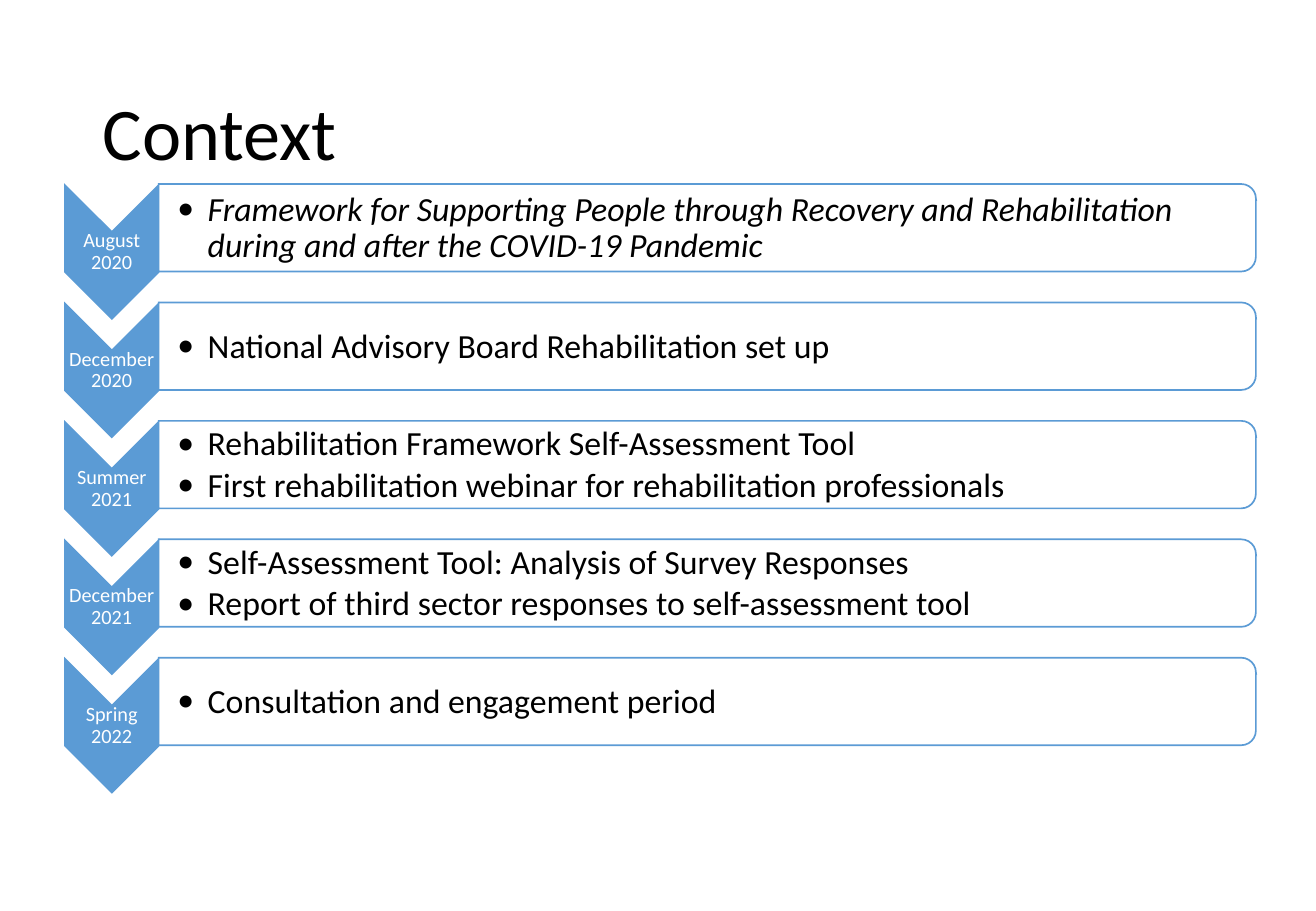
"""Builds the Context slide: a vertical chevron timeline with one card per date."""
from lxml import etree
from pptx import Presentation
from pptx.dml.color import RGBColor
from pptx.enum.shapes import MSO_SHAPE
from pptx.enum.text import MSO_ANCHOR, PP_ALIGN
from pptx.oxml.ns import qn
from pptx.util import Pt

TITLE = "Context"
MILESTONES = [
    ("August 2020", True, ["Framework for Supporting People through Recovery and "
                           "Rehabilitation during and after the COVID-19 Pandemic"]),
    ("December 2020", False, ["National Advisory Board Rehabilitation set up"]),
    ("Summer 2021", False, ["Rehabilitation Framework Self-Assessment Tool",
                            "First rehabilitation webinar for rehabilitation professionals"]),
    ("December 2021", False, ["Self-Assessment Tool: Analysis of Survey Responses",
                              "Report of third sector responses to self-assessment tool"]),
    ("Spring 2022", False, ["Consultation and engagement period"]),
]

FONT = "Calibri"
BLUE = RGBColor(0x5B, 0x9B, 0xD5)
WHITE = RGBColor(0xFF, 0xFF, 0xFF)
BLACK = RGBColor(0x00, 0x00, 0x00)
CHEVRON = MSO_SHAPE.CHEVRON
CARD = MSO_SHAPE.ROUND_2_SAME_RECTANGLE
MIDDLE = MSO_ANCHOR.MIDDLE
CENTER = PP_ALIGN.CENTER
LEFT = PP_ALIGN.LEFT

PX = 914400 // 200
SLIDE_WIDTH, SLIDE_HEIGHT = 2166, 1500
TITLE_BOX = (149, 80, 1868, 290)
TITLE_INSETS = (20, 10, 20, 10)
ROW_PITCH = 195
CHEVRON_X, CHEVRON_Y = 184, 415
CHEVRON_LENGTH, CHEVRON_THICKNESS = 220, 154
LABEL_HEIGHT = 66
LABEL_INSETS = (2, 2, 2, 2)
CARD_X, CARD_Y = 1164, 375
CARD_WIDTH, CARD_HEIGHT = 1806, 144
CARD_TEXT_LEFT, CARD_TEXT_WIDTH, CARD_TEXT_HEIGHT = 262, 1800, 132
CARD_INSETS = (30, 3, 2, 2)
BULLET_INDENT = 50


def add_rotated(slide, kind, center_x, center_y, width, height, fill):
    """Add a blue-lined shape, sized before its quarter turn about its centre."""
    box = (center_x - width / 2, center_y - height / 2, width, height)
    shape = slide.shapes.add_shape(kind, *(int(value * PX) for value in box))
    shape.rotation = 90
    shape.shadow.inherit = False
    shape.fill.solid()
    shape.fill.fore_color.rgb = fill
    shape.line.color.rgb = BLUE
    shape.line.width = Pt(1)
    outline = shape.line._get_or_add_ln()
    etree.SubElement(outline, qn("a:miter")).set("lim", "800000")
    return shape


def set_opacity(shape, percent):
    """Set the opacity of a solid shape fill."""
    color = shape.fill._xPr.find(qn("a:solidFill"))[0]
    etree.SubElement(color, qn("a:alpha")).set("val", str(percent * 1000))


def add_bullet(paragraph):
    """Give a paragraph a hanging round bullet."""
    properties = paragraph._p.get_or_add_pPr()
    properties.set("marL", str(BULLET_INDENT * PX))
    properties.set("indent", str(-BULLET_INDENT * PX))
    etree.SubElement(properties, qn("a:buFont")).set("typeface", FONT)
    etree.SubElement(properties, qn("a:buChar")).set("char", "•")


def add_text(slide, box, insets, lines, size, color, align=LEFT,
             space_after=0, italic=False, bulleted=False):
    """Add a middle-anchored text box with one paragraph per line."""
    frame = slide.shapes.add_textbox(*(int(value * PX) for value in box)).text_frame
    frame.word_wrap = True
    frame.vertical_anchor = MIDDLE
    (frame.margin_left, frame.margin_top,
     frame.margin_right, frame.margin_bottom) = (value * PX for value in insets)
    for index, line in enumerate(lines):
        paragraph = frame.add_paragraph() if index else frame.paragraphs[0]
        if bulleted:
            paragraph.level = 1
            add_bullet(paragraph)
        paragraph.alignment = align
        paragraph.line_spacing = 0.9
        paragraph.space_after = Pt(space_after)
        run = paragraph.add_run()
        run.text = line
        run.font.name = FONT
        run.font.size = Pt(size)
        run.font.italic = italic
        run.font.color.rgb = color


def add_milestone(slide, row, date, italic, points):
    """Add one dated chevron and its card."""
    chevron_y = CHEVRON_Y + row * ROW_PITCH
    card_y = CARD_Y + row * ROW_PITCH
    add_rotated(slide, CHEVRON, CHEVRON_X, chevron_y,
                CHEVRON_LENGTH, CHEVRON_THICKNESS, BLUE)
    label_box = (CHEVRON_X - CHEVRON_THICKNESS / 2, chevron_y - LABEL_HEIGHT / 2,
                 CHEVRON_THICKNESS, LABEL_HEIGHT)
    add_text(slide, label_box, LABEL_INSETS, [date], 12, WHITE, CENTER, space_after=4.2)
    card = add_rotated(slide, CARD, CARD_X, card_y, CARD_HEIGHT, CARD_WIDTH, WHITE)
    set_opacity(card, 90)
    card_box = (CARD_TEXT_LEFT, card_y - CARD_TEXT_HEIGHT / 2 + 1,
                CARD_TEXT_WIDTH, CARD_TEXT_HEIGHT)
    add_text(slide, card_box, CARD_INSETS, points, 20, BLACK,
             space_after=3, italic=italic, bulleted=True)


def main():
    """Build and save the slide."""
    presentation = Presentation()
    presentation.slide_width = SLIDE_WIDTH * PX
    presentation.slide_height = SLIDE_HEIGHT * PX
    slide = presentation.slides.add_slide(presentation.slide_layouts[6])
    add_text(slide, TITLE_BOX, TITLE_INSETS, [TITLE], 44, BLACK)
    for row, (date, italic, points) in enumerate(MILESTONES):
        add_milestone(slide, row, date, italic, points)
    presentation.save("out.pptx")


if __name__ == "__main__":
    main()
